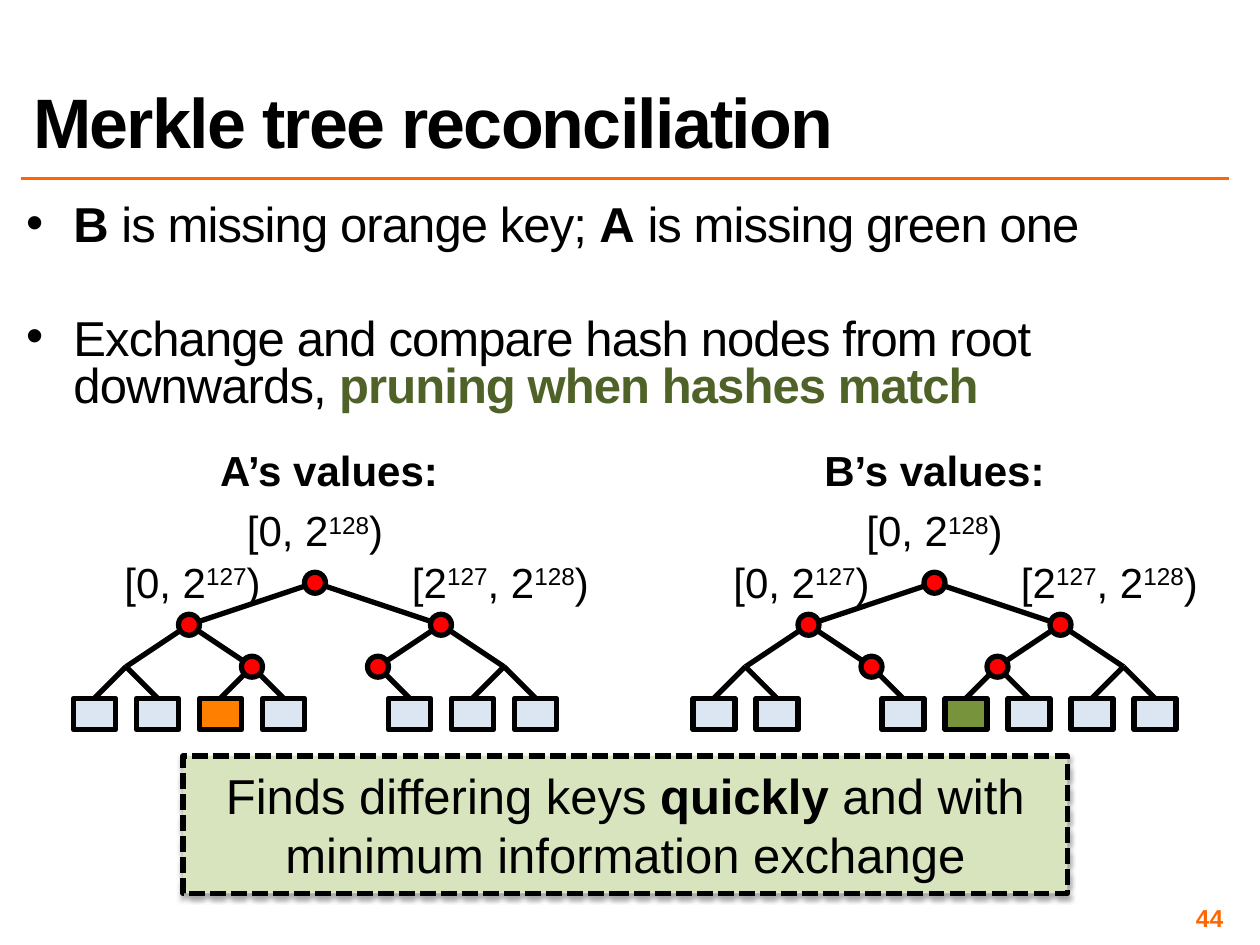
from pptx import Presentation
from pptx.dml.color import RGBColor
from pptx.enum.dml import MSO_LINE
from pptx.enum.shapes import MSO_CONNECTOR, MSO_SHAPE
from pptx.enum.text import MSO_ANCHOR as Anchor, MSO_AUTO_SIZE as AutoSize, PP_ALIGN as Align
from pptx.oxml.ns import qn
from pptx.util import Pt
from lxml.etree import SubElement

BLACK, ORANGE, RED = "000000", "FF6600", "FF0000"
LEAF, ORANGE_KEY, GREEN_KEY = "DCE6F2", "FF8000", "77933C"
GAP = 36
LEVEL_Y = [399, 381, 357, 333]


def color(hex_string):
    return RGBColor.from_string(hex_string)


def set_all(target, values):
    for name, value in values.items():
        setattr(target, name, value)


def fill_paragraph(paragraph, text, size, bold=False, tint=BLACK, strong=BLACK,
                   spacing=0, **layout):
    """Write text in which *...* is bold in the strong colour and ^...^ is raised."""
    set_all(paragraph, layout)
    for i, part in enumerate(text.split("*")):
        for j, piece in enumerate(part.split("^")):
            if not piece:
                continue
            run = paragraph.add_run()
            run.text = piece
            set_all(run.font, {"size": Pt(size), "name": "Arial", "bold": bold or i % 2 == 1})
            run.font.color.rgb = color(strong if i % 2 else tint)
            properties = run.font._element
            if spacing:
                properties.set("spc", str(int(spacing * 100)))
            if j % 2:
                properties.set("baseline", "30000")


def add_text_frame(slide, left, top, width, height, inset=None, **frame_format):
    frame = slide.shapes.add_textbox(Pt(left), Pt(top), Pt(width), Pt(height)).text_frame
    set_all(frame, {"word_wrap": True, **frame_format})
    if inset is not None:
        sides = ("left", "top", "right", "bottom")
        set_all(frame, {f"margin_{side}": Pt(inset) for side in sides})
    return frame


def add_label(slide, center, top, width, text, bold=False):
    frame = add_text_frame(slide, center - width / 2, top, width, 36,
                           word_wrap=False, auto_size=AutoSize.SHAPE_TO_FIT_TEXT)
    fill_paragraph(frame.paragraphs[0], text, 24, bold, alignment=Align.CENTER)


def add_line(slide, start, end, tint=BLACK, width=3):
    line = slide.shapes.add_connector(MSO_CONNECTOR.STRAIGHT, *map(Pt, start + end))
    line.line.color.rgb = color(tint)
    line.line.width = Pt(width)
    SubElement(line._element.spPr, qn("a:effectLst"))


def add_outlined(slide, kind, left, top, width, height, fill):
    shape = slide.shapes.add_shape(kind, Pt(left), Pt(top), Pt(width), Pt(height))
    shape.shadow.inherit = False
    shape.fill.solid()
    shape.fill.fore_color.rgb = color(fill)
    shape.line.color.rgb = color(BLACK)
    shape.line.width = Pt(3)
    return shape


def add_bullets(slide):
    frame = add_text_frame(slide, 12, 114, 690, 131, inset=3)
    bullets = [
        ("*B* is missing orange key; *A* is missing green one", BLACK, 5.6),
        ("Exchange and compare hash nodes from root downwards, "
         "*pruning when hashes match*", "4F6228", 38),
    ]
    for i, (text, strong, before) in enumerate(bullets):
        paragraph = frame.add_paragraph() if i else frame.paragraphs[0]
        fill_paragraph(paragraph, text, 28, strong=strong, spacing=-0.5,
                       line_spacing=0.8, space_before=Pt(before))
        properties = paragraph._p.get_or_add_pPr()
        properties.set("marL", str(Pt(27)))
        properties.set("indent", str(Pt(-27)))
        SubElement(properties, qn("a:buFont")).set("typeface", "Arial")
        SubElement(properties, qn("a:buChar")).set("char", "•")


def add_tree(slide, first_x, keys, heading, heading_x, label_shift):
    """Draw a hash tree; keys maps each present leaf's place (0 to 7) to its fill."""
    def node(level, place):
        return first_x + GAP * (2 ** level * (place + 0.5) - 0.5), LEVEL_Y[level]

    for place, fill in keys.items():
        x, y = node(0, place)
        add_outlined(slide, MSO_SHAPE.RECTANGLE, x - 12, y, 24, 18, fill)
    for level, places in enumerate((keys, range(4), range(2))):
        for place in places:
            add_line(slide, node(level, place), node(level + 1, place // 2))

    root_x = node(3, 0)[0]
    add_label(slide, heading_x, 250.5, 142, heading, bold=True)
    add_label(slide, root_x, 285, 96, "[0, 2^128^)")
    add_label(slide, root_x - 70 + label_shift, 314.5, 96, "[0, 2^127^)")
    add_label(slide, root_x + 106 + label_shift, 314.5, 127, "[2^127^, 2^128^)")

    for level, place in ((3, 0), (2, 0), (2, 1), (1, 1), (1, 2)):
        x, y = node(level, place)
        add_outlined(slide, MSO_SHAPE.OVAL, x - 6, y - 6, 12, 12, RED)


def add_conclusion(slide):
    box = add_outlined(slide, MSO_SHAPE.RECTANGLE, 104.5, 432, 505.5, 78.5, "D7E4BD")
    box.line.dash_style = MSO_LINE.SQUARE_DOT
    effects = box._element.spPr.find(qn("a:effectLst"))
    shadow = SubElement(effects, qn("a:outerShdw"), blurRad=str(Pt(3.1)),
                        dist=str(Pt(1.8)), dir="5400000", rotWithShape="0")
    shade = SubElement(shadow, qn("a:srgbClr"), val=BLACK)
    SubElement(shade, qn("a:alpha"), val="35000")
    set_all(box.text_frame, {"word_wrap": True, "vertical_anchor": Anchor.MIDDLE})
    fill_paragraph(box.text_frame.paragraphs[0],
                   "Finds differing keys *quickly* and with minimum information exchange",
                   28, alignment=Align.CENTER)


def main():
    deck = Presentation()
    set_all(deck, {"slide_width": Pt(720), "slide_height": Pt(540)})
    slide = deck.slides.add_slide(deck.slide_layouts[6])

    add_line(slide, (12, 102), (702, 102), ORANGE, 2)
    title = add_text_frame(slide, 12, 12, 690, 84, vertical_anchor=Anchor.BOTTOM)
    fill_paragraph(title.paragraphs[0], "Merkle tree reconciliation", 40, True,
                   spacing=-1, line_spacing=0.8)
    add_bullets(slide)
    number = add_text_frame(slide, 534, 516, 168, 17, inset=3, vertical_anchor=Anchor.MIDDLE)
    fill_paragraph(number.paragraphs[0], "44", 14, True, ORANGE, alignment=Align.RIGHT)

    a_keys = {place: LEAF for place in range(8) if place != 4}
    b_keys = {place: LEAF for place in range(8) if place != 2}
    a_keys[2] = ORANGE_KEY
    b_keys[3 + 1] = GREEN_KEY
    add_tree(slide, 54, a_keys, "A’s values:", 188, 0)
    add_tree(slide, 408, b_keys, "B’s values:", 534, -6)
    add_conclusion(slide)
    deck.save("out.pptx")


if __name__ == "__main__":
    main()
